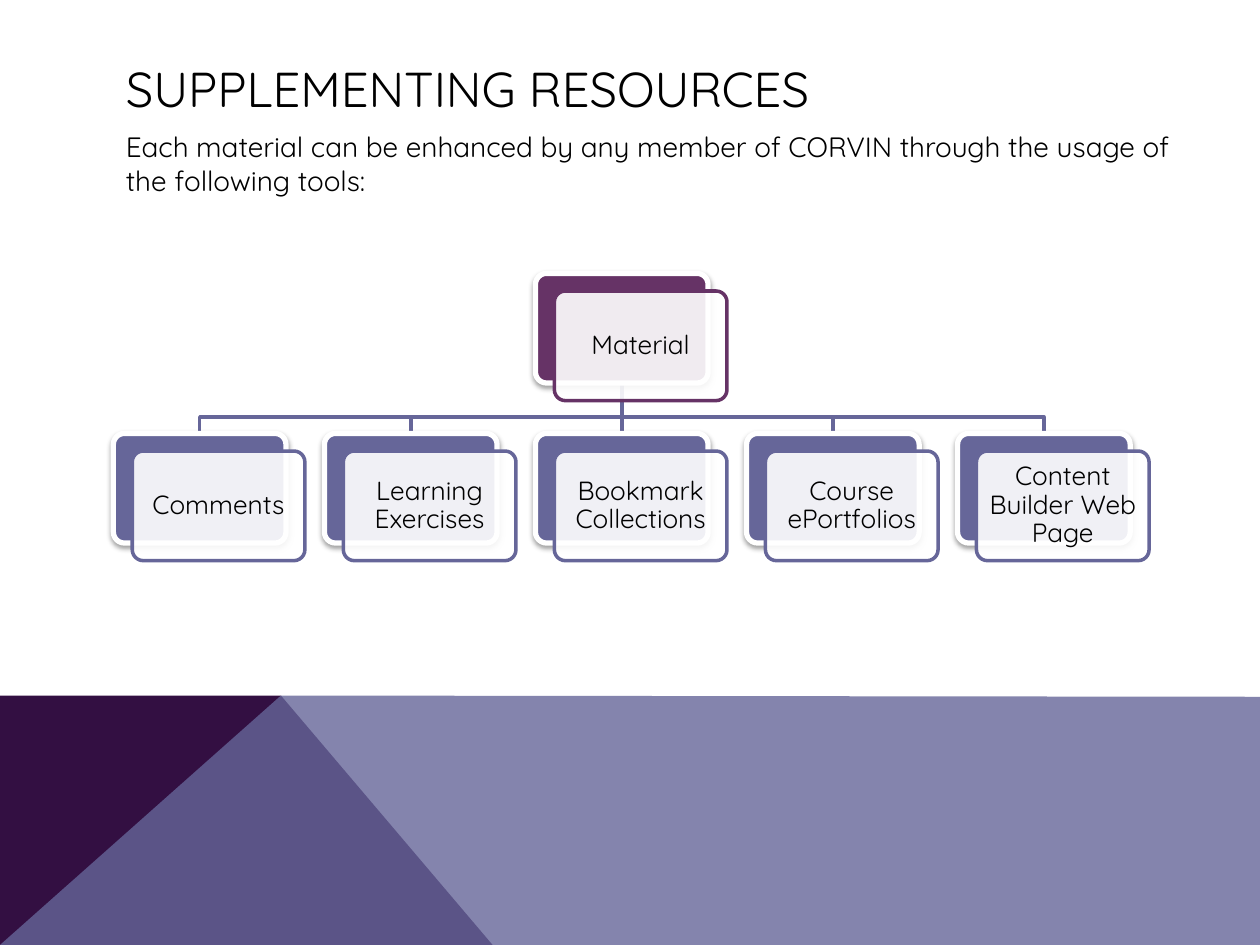
from lxml import etree
from pptx import Presentation
from pptx.dml.color import RGBColor
from pptx.enum.shapes import MSO_CONNECTOR, MSO_SHAPE
from pptx.enum.text import MSO_ANCHOR, PP_ALIGN
from pptx.oxml.ns import qn
from pptx.util import Inches, Pt

ROUNDED = MSO_SHAPE.ROUNDED_RECTANGLE
STRAIGHT = MSO_CONNECTOR.STRAIGHT
MIDDLE = MSO_ANCHOR.MIDDLE
CENTER = PP_ALIGN.CENTER

FONT = "Quicksand"
PLUM = "663366"
VIOLET = "666699"
WHITE = "FFFFFF"

CARD_WIDTH, CARD_HEIGHT = 1.37, 0.87
CARD_OFFSET_X, CARD_OFFSET_Y = 0.15, 0.14
FIRST_LEFT, COLUMN_STEP = 0.9, 1.675
ROOT_TOP, CHILD_TOP = 2.17, 3.44
BRANCH_Y = 3.31
CHILDREN = ["Comments", "Learning Exercises", "Bookmark Collections",
            "Course ePortfolios", "Content Builder Web Page"]


def paint(color_format, color, opacity=100):
    """Apply a solid colour, with opacity in percent."""
    color_format.solid()
    color_format.fore_color.rgb = RGBColor.from_string(color)
    if opacity < 100:
        rgb = color_format._xPr.find(qn("a:solidFill"))[0]
        etree.SubElement(rgb, qn("a:alpha"), val=str(opacity * 1000))


def write(frame, text, size):
    frame.word_wrap = True
    para = frame.paragraphs[0]
    span = para.add_run()
    span.text = text
    span.font.name = FONT
    span.font.size = Pt(size)
    paint(span.font.fill, "000000")
    return para


deck = Presentation()
deck.slide_width = Inches(10)
deck.slide_height = Inches(7.5)
page = deck.slides.add_slide(deck.slide_layouts[6])
shapes = page.shapes

# Coloured bands along the bottom
bands = [
    ([(0, 7.5), (0, 5.52), (2.23, 5.52), (3.91, 7.5)], "330F42", 100),
    ([(0, 7.5), (2.23, 5.52), (10, 5.53), (10, 7.5)], VIOLET, 80),
]
for points, color, opacity in bands:
    corners = [(Inches(x), Inches(y)) for x, y in points]
    builder = shapes.build_freeform(*corners[0])
    builder.add_line_segments(corners[1:], close=True)
    band = builder.convert_to_shape()
    band.shadow.inherit = False
    paint(band.fill, color, opacity)
    band.line.fill.background()

# Heading and introduction
title = shapes.add_textbox(Inches(0.9), Inches(0.4), Inches(8.22), Inches(0.6))
title.text_frame.vertical_anchor = MIDDLE
write(title.text_frame, "SUPPLEMENTING RESOURCES", 28)

intro = shapes.add_textbox(Inches(0.9), Inches(0.98), Inches(8.58), Inches(0.94))
write(intro.text_frame, "Each material can be enhanced by any member of CORVIN "
      "through the usage of the following tools:", 16)

# Branches from the root card to each child card
lefts = [FIRST_LEFT + column * COLUMN_STEP for column in range(len(CHILDREN))]
root_left = lefts[len(lefts) // 2]
root_x = Inches(root_left + CARD_WIDTH / 2)
root_bottom = Inches(ROOT_TOP + CARD_HEIGHT)
for left in lefts:
    child_x = Inches(left + CARD_WIDTH / 2)
    if left == root_left:
        branch = shapes.add_connector(STRAIGHT, root_x, root_bottom,
                                      child_x, Inches(CHILD_TOP))
        etree.SubElement(branch._element.spPr, qn("a:effectLst"))
    else:
        builder = shapes.build_freeform(root_x, root_bottom)
        builder.add_line_segments([(root_x, Inches(BRANCH_Y)),
                                   (child_x, Inches(BRANCH_Y)),
                                   (child_x, Inches(CHILD_TOP))], close=False)
        branch = builder.convert_to_shape()
        branch.shadow.inherit = False
        branch.fill.background()
    paint(branch.line.fill, VIOLET)
    branch.line.width = Pt(2)

# Cards: a coloured back plate and a translucent labelled front plate
cards = [("Material", root_left, ROOT_TOP, PLUM)]
cards += [(label, left, CHILD_TOP, VIOLET) for label, left in zip(CHILDREN, lefts)]
for label, left, top, color in cards:
    back = shapes.add_shape(ROUNDED, Inches(left), Inches(top),
                            Inches(CARD_WIDTH), Inches(CARD_HEIGHT))
    front = shapes.add_shape(ROUNDED, Inches(left + CARD_OFFSET_X),
                             Inches(top + CARD_OFFSET_Y),
                             Inches(CARD_WIDTH), Inches(CARD_HEIGHT))
    for plate, fill, opacity, outline, width in [(back, color, 100, WHITE, 3),
                                                 (front, WHITE, 90, color, 2)]:
        plate.adjustments[0] = 0.1
        plate.shadow.inherit = False
        paint(plate.fill, fill, opacity)
        paint(plate.line.fill, outline)
        plate.line.width = Pt(width)

    effects = back._element.spPr.find(qn("a:effectLst"))
    shadow = etree.SubElement(effects, qn("a:outerShdw"), blurRad=str(Pt(3.1)),
                              dist=str(Pt(1.6)), dir="5400000", rotWithShape="0")
    shade = etree.SubElement(shadow, qn("a:srgbClr"), val="000000")
    etree.SubElement(shade, qn("a:alpha"), val="38000")

    frame = front.text_frame
    frame.vertical_anchor = MIDDLE
    frame.margin_left = frame.margin_right = Inches(0.06)
    frame.margin_top = frame.margin_bottom = Inches(0.06)
    para = write(frame, label, 15)
    para.alignment = CENTER
    para.line_spacing = 0.9

deck.save("out.pptx")
